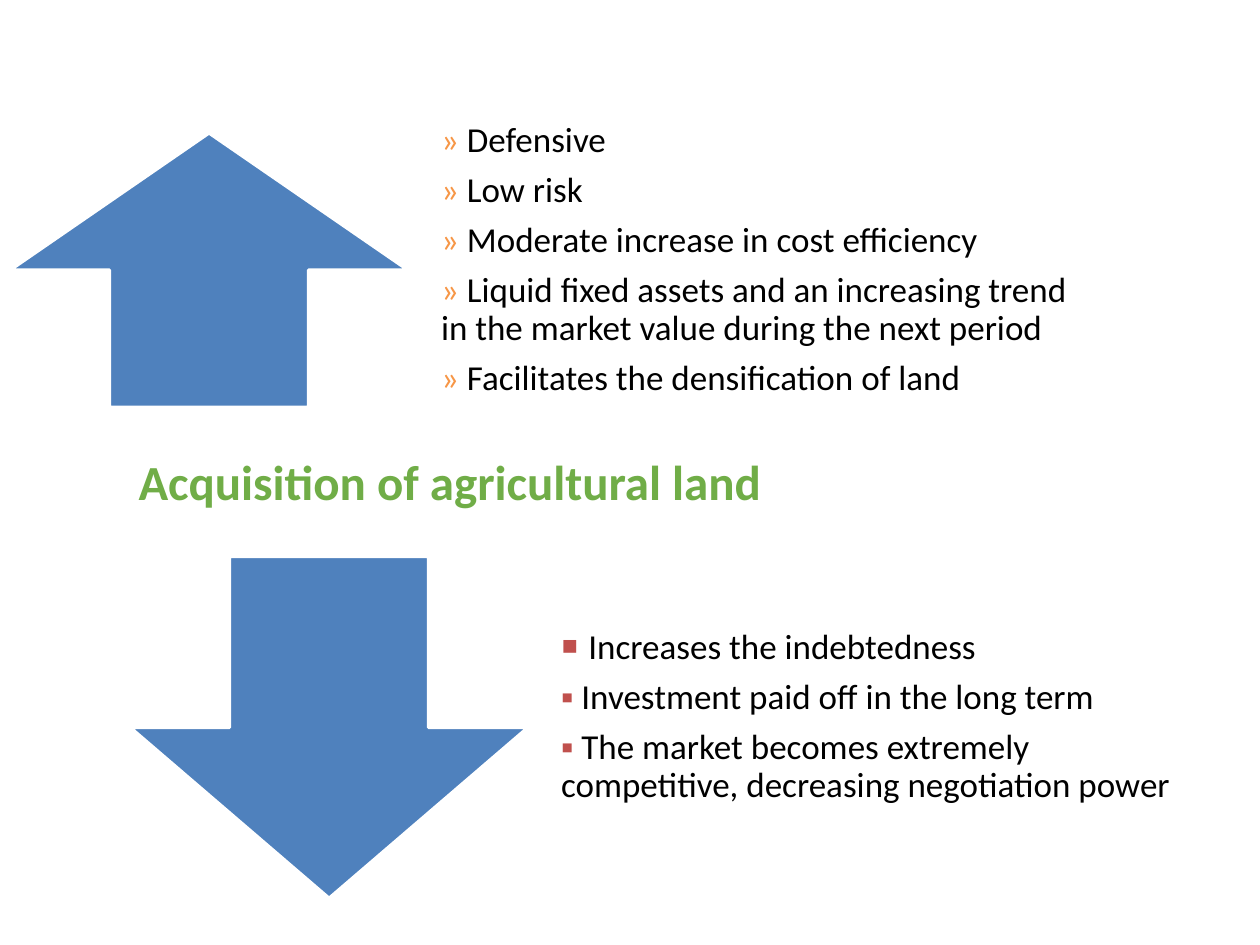
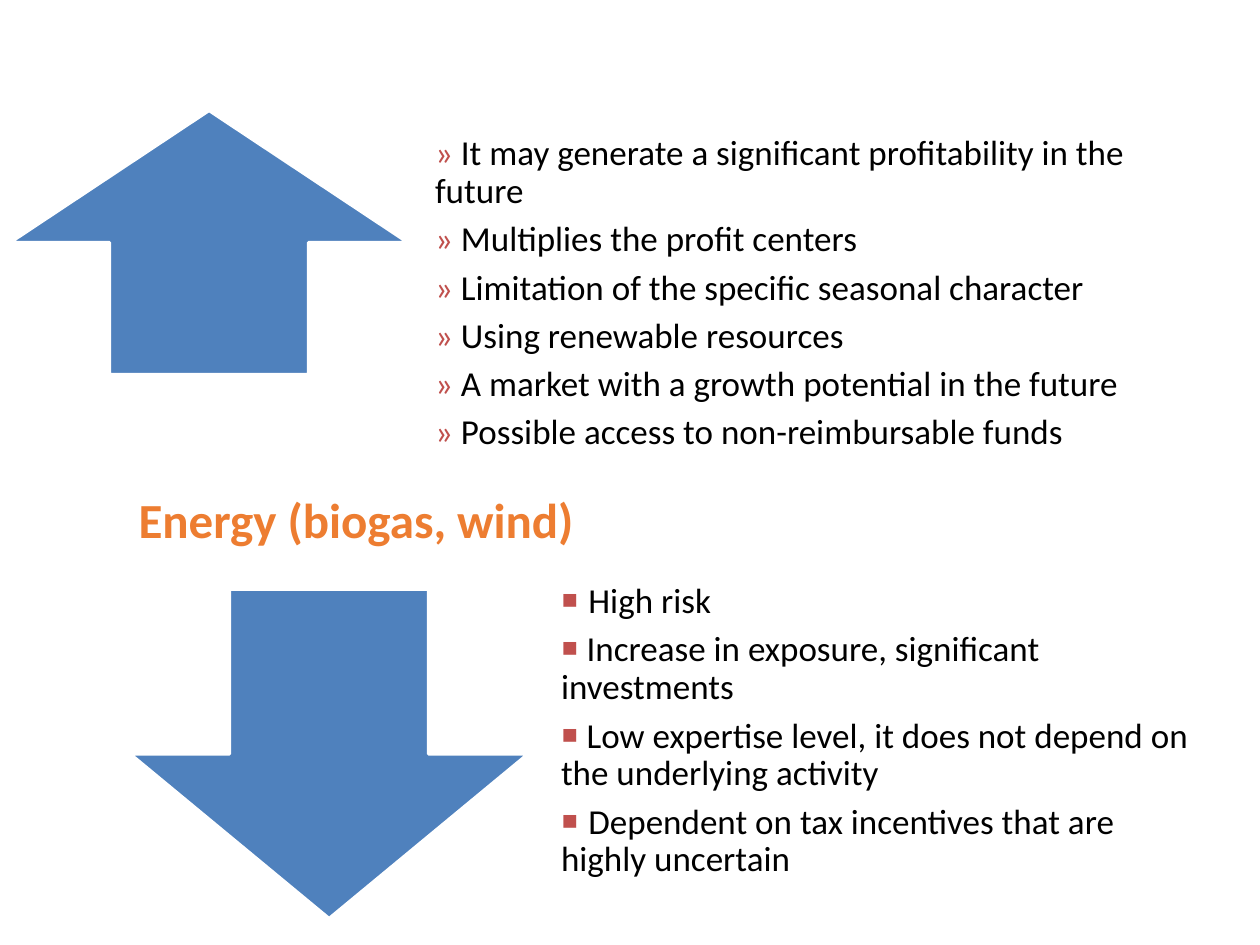
import pptx
import pptx.dml.color
import pptx.enum.shapes
import pptx.enum.text
import pptx.util
from lxml import etree
from pptx.oxml.ns import qn

Cm, Pt = pptx.util.Cm, pptx.util.Pt
Arrow = pptx.enum.shapes.MSO_SHAPE
Anchor = pptx.enum.text.MSO_ANCHOR

SANS, SERIF = "Calibri", "TeX Gyre Schola"
BLUE, WHITE, BLACK = "4F81BD", "FFFFFF", "000000"
ORANGE, RED = "F79646", "C0504D"

AMBER_QUOTE = ("» ", SANS, ORANGE)
RED_QUOTE = ("» ", SANS, RED)
TIGHT_QUOTE = ("»", SANS, RED)
SQUARE = ("▪ ", SERIF, RED)
TIGHT_SQUARE = ("▪", SERIF, RED)
SMALL_SQUARE = ("▪ ", SANS, RED)

INVESTMENTS = [
    {
        "heading": "Acquisition of agricultural land",
        "heading_color": "70AD47",
        "heading_top": 8.97,
        "band_height": 8.51,
        "gap_after": 7,
        "advantages": {
            "band_top": 1.19,
            "list_place": (8.48, 1.19, 13.64),
            "points": [
                (AMBER_QUOTE, "Defensive"),
                (AMBER_QUOTE, "Low risk"),
                (AMBER_QUOTE, "Moderate increase in cost efficiency"),
                (AMBER_QUOTE, "Liquid fixed assets and an increasing trend in the "
                              "market value during the next period"),
                (AMBER_QUOTE, "Facilitates the densification of land"),
            ],
        },
        "drawbacks": {
            "band_top": 10.41,
            "list_place": (10.9, 10.41, 13.64),
            "points": [
                (SQUARE, "Increases the indebtedness"),
                (SMALL_SQUARE, "Investment paid off in the long term"),
                (SMALL_SQUARE, "The market becomes extremely competitive, "
                               "decreasing negotiation power"),
            ],
        },
    },
    {
        "heading": "Energy (biogas, wind)",
        "heading_color": "ED7D31",
        "heading_top": 9.75,
        "band_height": 8.2,
        "gap_after": 6,
        "advantages": {
            "band_top": 0.79,
            "list_place": (8.36, 2.03, 15.52),
            "points": [
                (RED_QUOTE, "It may generate a significant profitability in the future"),
                (TIGHT_QUOTE, " Multiplies the profit centers"),
                (TIGHT_QUOTE, " Limitation of the specific seasonal character"),
                (TIGHT_QUOTE, " Using renewable resources"),
                (TIGHT_QUOTE, " A market with a growth potential in the future"),
                (RED_QUOTE, "Possible access to non-reimbursable funds"),
            ],
        },
        "drawbacks": {
            "band_top": 11.1,
            "list_place": (10.9, 10.85, 13.64),
            "points": [
                (SQUARE, "High risk"),
                (TIGHT_SQUARE, " Increase in exposure, significant investments"),
                (TIGHT_SQUARE, " Low expertise level, it does not depend on the "
                               "underlying activity"),
                (SQUARE, "Dependent on tax incentives that are highly uncertain"),
            ],
        },
    },
]

SIDES = [
    ("advantages", 1, Arrow.UP_ARROW, 0.2, 0.65),
    ("drawbacks", 2, Arrow.DOWN_ARROW, 2.62, 0.81),
]
ARROW_WIDTH = 8.03
SLIDE_WIDTH, SLIDE_HEIGHT = 25.4, 19.05
HEADING_HEIGHT = 1.45
HEADING_INDENT = 2.54

FRAME = {"word_wrap": True, "auto_size": pptx.enum.text.MSO_AUTO_SIZE.NONE}
HEADING_FRAME = {**FRAME, "vertical_anchor": Anchor.TOP}
LIST_FRAME = {
    **FRAME,
    "vertical_anchor": Anchor.MIDDLE,
    "margin_left": Cm(0.41),
    "margin_top": 0,
    "margin_right": Cm(0.41),
    "margin_bottom": Cm(0.41),
}


def color(value):
    return pptx.dml.color.RGBColor.from_string(value)


def apply(target, formats):
    for attribute, value in formats.items():
        setattr(target, attribute, value)


def place(part, left, top, width, height):
    apply(part, {"left": Cm(left), "top": Cm(top), "width": Cm(width), "height": Cm(height)})


def indent(paragraph, left):
    properties = paragraph._p.get_or_add_pPr()
    properties.set("marL", str(Cm(left)))
    properties.set("indent", "0")
    etree.SubElement(properties, qn("a:buNone"))


def add_words(paragraph, words, font, hue, size, bold=False):
    run = paragraph.add_run()
    run.text = words
    apply(run.font, {"name": font, "size": Pt(size), "bold": bold})
    run.font.color.rgb = color(hue)


def write_heading(heading, investment):
    place(heading, 0, investment["heading_top"], SLIDE_WIDTH, HEADING_HEIGHT)
    apply(heading.text_frame, HEADING_FRAME)
    paragraph = heading.text_frame.paragraphs[0]
    indent(paragraph, HEADING_INDENT)
    paragraph.alignment = pptx.enum.text.PP_ALIGN.LEFT
    add_words(paragraph, investment["heading"], SANS, investment["heading_color"], 28, True)


def write_points(body, points, gap_after):
    apply(body.text_frame, LIST_FRAME)
    spacing = {"line_spacing": 0.9, "space_before": Pt(0), "space_after": Pt(gap_after)}
    for number, ((mark, mark_font, mark_color), point) in enumerate(points):
        paragraph = body.text_frame.add_paragraph() if number else body.text_frame.paragraphs[0]
        indent(paragraph, 0)
        apply(paragraph, spacing)
        add_words(paragraph, mark, mark_font, mark_color, 20)
        add_words(paragraph, point, SANS, BLACK, 20)


def draw_arrow(slide, direction, left, band_top, band_height, share):
    height = band_height * share
    top = band_top + (band_height - height) / 2
    arrow = slide.shapes.add_shape(direction, Cm(left), Cm(top), Cm(ARROW_WIDTH), Cm(height))
    arrow.shadow.inherit = False
    arrow.fill.solid()
    arrow.fill.fore_color.rgb = color(BLUE)
    arrow.line.color.rgb = color(WHITE)
    arrow.line.width = Pt(2)


def build_slide(deck, investment):
    slide = deck.slides.add_slide(deck.slide_layouts.get_by_name("Two Content"))
    write_heading(slide.shapes.title, investment)
    band_height = investment["band_height"]
    for side, body_index, direction, arrow_left, share in SIDES:
        content = investment[side]
        draw_arrow(slide, direction, arrow_left, content["band_top"], band_height, share)
        body = slide.placeholders[body_index]
        place(body, *content["list_place"], band_height)
        write_points(body, content["points"], investment["gap_after"])


def main():
    deck = pptx.Presentation()
    apply(deck, {"slide_width": Cm(SLIDE_WIDTH), "slide_height": Cm(SLIDE_HEIGHT)})
    for investment in INVESTMENTS:
        build_slide(deck, investment)
    deck.save("out.pptx")


if __name__ == "__main__":
    main()
